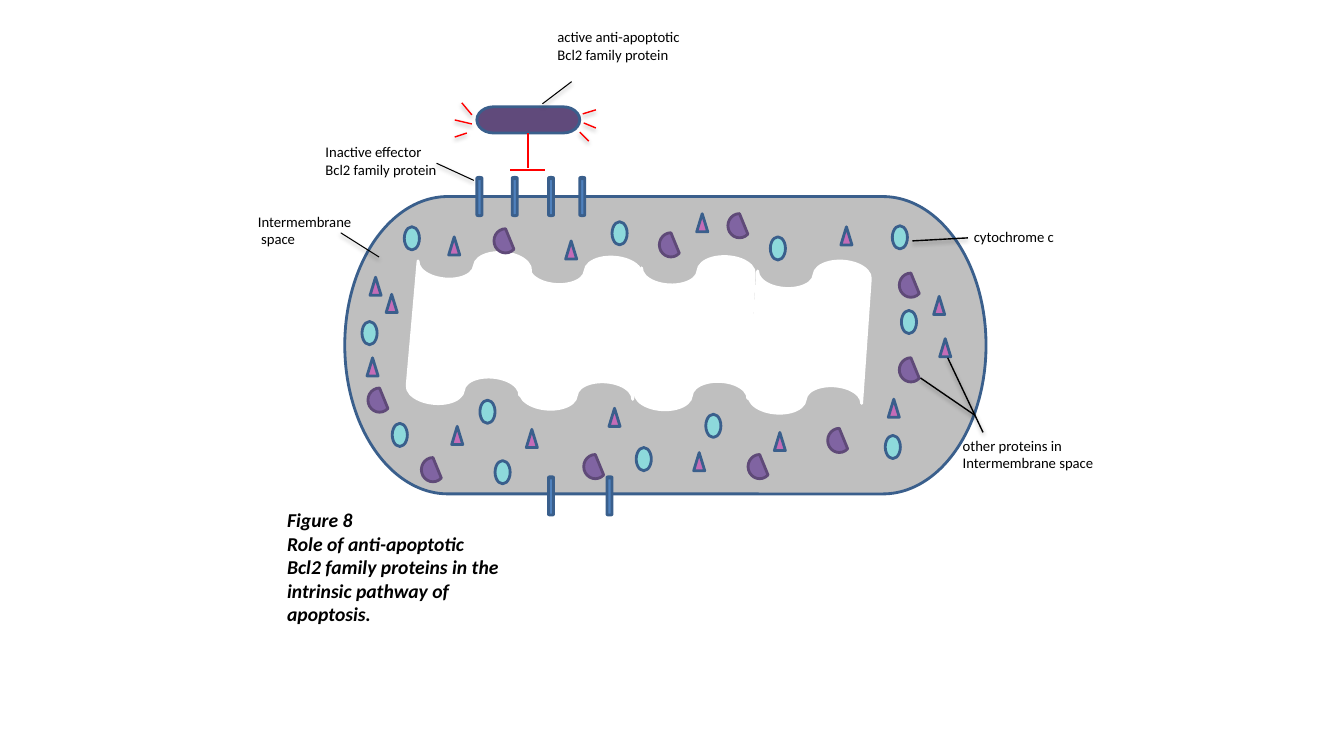
from lxml import etree
from pptx import Presentation
from pptx import util as u
from pptx.dml import color
from pptx.enum import shapes, text
from pptx.oxml import ns

COLORS = {
    "membrane": "3A5F8C", "cytosol": "BFBFBF", "matrix": "FFFFFF",
    "channel": "4F81BD", "triangle": "C46CB7", "cytochrome": "8DD9DB",
    "chord": "8064A2", "chord_line": "5F4A78", "inhibitor": "604A7B",
    "signal": "FF0000", "ink": "000000",
}
KINDS = shapes.MSO_SHAPE


def rgb(name):
    return color.RGBColor.from_string(COLORS[name])


def add_part(page, kind, box, fill, line="membrane", rotation=0):
    part = page.shapes.add_shape(kind, *map(u.Inches, box))
    part.shadow.inherit = False
    part.fill.solid()
    part.fill.fore_color.rgb = rgb(fill)
    part.line.color.rgb = rgb(line)
    part.line.width = u.Pt(2)
    part.rotation = rotation


def add_line(page, origin, ends, ink, width, shadow=True):
    """Draw a line whose ends are offsets from the origin."""
    left, top = origin
    x1, y1, x2, y2 = ends
    line = page.shapes.add_connector(
        shapes.MSO_CONNECTOR.STRAIGHT,
        *map(u.Inches, (left + x1, top + y1, left + x2, top + y2)))
    line.line.color.rgb = rgb(ink)
    line.line.width = u.Pt(width)
    effects = etree.SubElement(line._element.spPr, ns.qn("a:effectLst"))
    if shadow:
        outer = etree.SubElement(
            effects, ns.qn("a:outerShdw"), blurRad=str(u.Pt(3.1)),
            dist=str(u.Pt(1.8)), dir="5400000", rotWithShape="0")
        tint = etree.SubElement(outer, ns.qn("a:srgbClr"), val=COLORS["ink"])
        etree.SubElement(tint, ns.qn("a:alpha"), val="35000")


def add_text(page, box, lines, size=10.5, strong=False):
    frame = page.shapes.add_textbox(*map(u.Inches, box)).text_frame
    frame.word_wrap = True
    frame.auto_size = text.MSO_AUTO_SIZE.SHAPE_TO_FIT_TEXT
    for index, line in enumerate(lines):
        para = frame.add_paragraph() if index else frame.paragraphs[0]
        span = para.add_run()
        span.text = line
        span.font.name = "Calibri"
        span.font.size = u.Pt(size)
        span.font.bold = span.font.italic = strong
        span.font.color.rgb = rgb("ink")


def draw_mitochondrion(page, box):
    left, top = box[:2]
    # Outer membrane
    add_part(page, KINDS.FLOWCHART_TERMINATOR, box, "cytosol")

    # Matrix with its folded inner membrane
    for x, y, angle in [(0.67, 0.53, 5), (1.78, 0.58, 184),
                        (2.91, 0.58, 183), (4.05, 0.62, 4)]:
        add_part(page, KINDS.FLOWCHART_PUNCHED_TAPE,
                 (left + x, top + y, 1.12, 1.55), "matrix", "matrix", angle)

    # Effector proteins, then the proteins between the membranes
    families = [
        (KINDS.CAN, (0.05, 0.38), "channel", "membrane",
         [(2.6, 2.78), (2.02, 2.78), (2.33, -0.19), (2.02, -0.19),
          (1.66, -0.19), (1.31, -0.19)]),
        (KINDS.ISOSCELES_TRIANGLE, (0.11, 0.18), "triangle", "membrane",
         [(0.25, 0.8), (0.41, 0.97), (0.22, 1.6), (1.06, 2.28), (2.62, 2.1),
          (3.46, 2.54), (4.26, 2.34), (1.8, 2.31), (4.92, 0.3), (2.19, 0.44),
          (1.03, 0.4), (3.49, 0.17), (5.39, 2.01), (5.9, 1.41),
          (5.84, 0.99)]),
        (KINDS.FLOWCHART_CONNECTOR, (0.15, 0.23), "cytochrome", "membrane",
         [(4.22, 0.4), (2.65, 0.25), (0.59, 0.3), (0.17, 1.24), (0.47, 2.25),
          (1.34, 2.02), (1.49, 2.62), (2.89, 2.49), (3.58, 2.16),
          (5.36, 2.37), (5.52, 1.13), (5.43, 0.29)]),
        (KINDS.CHORD, (0.23, 0.24), "chord", "chord_line",
         [(4, 2.56), (3.8, 0.17), (3.12, 0.36), (1.48, 0.32), (0.23, 1.9),
          (0.76, 2.59), (2.37, 2.56), (4.79, 2.3), (5.5, 1.6), (5.5, 0.76)]),
    ]
    for kind, size, fill, line, places in families:
        for x, y in places:
            add_part(page, kind, (left + x, top + y, *size), fill, line)


def draw_inhibitor(page, box):
    origin, (width, height) = box[:2], box[2:]
    add_part(page, KINDS.FLOWCHART_TERMINATOR, box, "inhibitor")
    # Blocking sign: stem and bar
    middle = width / 2
    for ends in [(middle, height, middle, height + 0.35),
                 (middle - 0.18, height + 0.37, middle + 0.17, height + 0.37)]:
        add_line(page, origin, ends, "signal", 1.25, shadow=False)
    # Activity rays
    for ends in [(1.18, 0.03, 1.05, 0.07), (1.18, 0.21, 1.06, 0.16),
                 (1.11, 0.34, 1.02, 0.25), (-0.05, 0.08, -0.15, -0.04),
                 (-0.05, 0.17, -0.22, 0.13), (-0.1, 0.26, -0.22, 0.3)]:
        add_line(page, origin, ends, "signal", 1)


def draw_label(page, box, lines, leaders, width=0.75):
    add_text(page, box, lines)
    for ends in leaders:
        add_line(page, box[:2], ends, "ink", width)


def draw_caption(page, box):
    add_text(page, box, [
        "Figure 8", "Role of anti-apoptotic",
        "Bcl2 family proteins in the intrinsic pathway of apoptosis.",
    ], size=14, strong=True)


def main():
    deck = Presentation()
    deck.slide_width, deck.slide_height = u.Inches(13.33), u.Inches(7.5)
    page = deck.slides.add_slide(deck.slide_layouts[6])

    draw_mitochondrion(page, (3.42, 1.95, 6.36, 2.95))
    draw_label(page, (3.13, 1.37, 1.4, 0.45),
               ["Inactive effector", "Bcl2 family protein"],
               [(1.57, 0.42, 1.2, 0.25)])
    draw_label(page, (9.56, 2.21, 1.24, 0.28), ["cytochrome c"],
               [(-0.51, 0.18, 0.04, 0.15)], width=1)
    draw_label(page, (9.45, 4.28, 1.59, 0.45),
               ["other proteins in", "Intermembrane space"],
               [(-0.32, -0.53, 0.22, -0.16), (-0.05, -0.73, 0.3, 0.01)],
               width=1)
    draw_label(page, (2.46, 2.06, 1.36, 0.45), ["Intermembrane", " space"],
               [(0.92, 0.25, 1.3, 0.49)])
    draw_caption(page, (2.75, 4.99, 2.47, 1.28))
    draw_inhibitor(page, (4.73, 1.06, 1.02, 0.26))
    draw_label(page, (5.43, 0.23, 1.59, 0.45),
               ["active anti-apoptotic", "Bcl2 family protein"],
               [(-0.05, 0.8, 0.24, 0.58)])
    deck.save("out.pptx")


if __name__ == "__main__":
    main()
